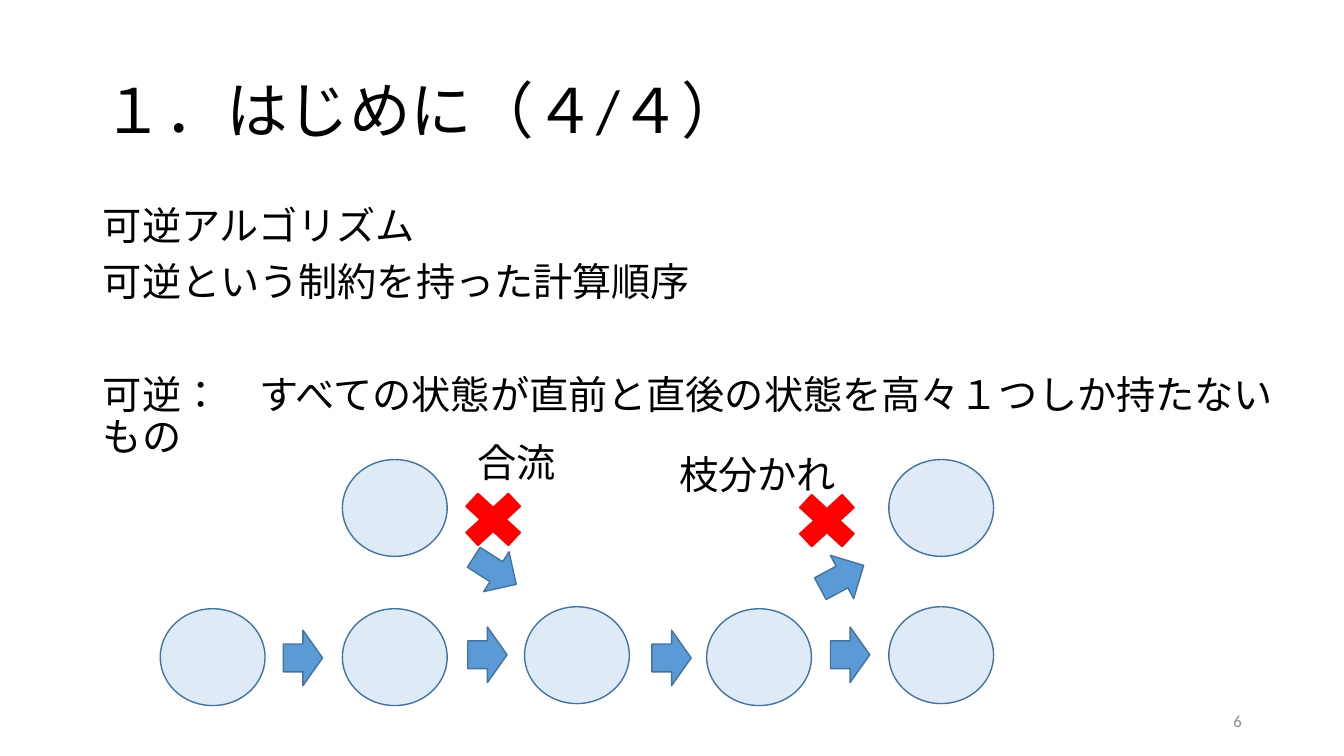
from lxml import etree
from pptx import Presentation
from pptx.dml.color import RGBColor
from pptx.enum.lang import MSO_LANGUAGE_ID
from pptx.enum.shapes import MSO_SHAPE
from pptx.enum.text import MSO_ANCHOR, MSO_AUTO_SIZE, PP_ALIGN
from pptx.oxml.ns import qn
from pptx.util import Cm, Pt

CIRCLE, ARROW, CROSS = MSO_SHAPE.OVAL, MSO_SHAPE.RIGHT_ARROW, MSO_SHAPE.MATH_MULTIPLY
LEFT, RIGHT = PP_ALIGN.LEFT, PP_ALIGN.RIGHT
MIDDLE, TOP = MSO_ANCHOR.MIDDLE, MSO_ANCHOR.TOP
NO_FIT = MSO_AUTO_SIZE.NONE
JAPANESE = MSO_LANGUAGE_ID.JAPANESE
PALE_BLUE, BLUE, DARK_BLUE, RED = "DEEBF7", "5B9BD5", "43739E", "FF0000"
BLACK, GREY = "000000", "8C8C8C"

presentation = Presentation()
presentation.slide_width, presentation.slide_height = Cm(33.87), Cm(19.05)
slide = presentation.slides.add_slide(presentation.slide_layouts[1])


def write(holder, box, lines, size, color=BLACK, align=LEFT, anchor=TOP):
    """Place a text holder and fill it with evenly formatted paragraphs."""
    holder.left, holder.top, holder.width, holder.height = map(Cm, box)
    frame = holder.text_frame
    frame.text = "\n".join(lines)
    frame.word_wrap = True
    frame.auto_size = NO_FIT
    frame.vertical_anchor = anchor
    for paragraph in frame.paragraphs:
        paragraph.alignment = align
        font = paragraph.runs[0].font
        font.name, font.size = "Calibri", Pt(size)
        font.language_id = JAPANESE
        font.color.rgb = RGBColor.from_string(color)


def draw(kind, box, fill, line=DARK_BLUE, rotation=0):
    shape = slide.shapes.add_shape(kind, *map(Cm, box))
    shape.shadow.inherit = False
    shape.rotation = rotation
    shape.fill.solid()
    shape.fill.fore_color.rgb = RGBColor.from_string(fill)
    shape.line.color.rgb = RGBColor.from_string(line)
    shape.line.width = Pt(1)


# Title and definition
title, definition = slide.placeholders
write(title, (2.34, 1.02, 29.21, 3.68), ["１．はじめに（４/４）"], 44, anchor=MIDDLE)
title.text_frame.paragraphs[0].line_spacing = 0.9

write(definition, (2.34, 5.08, 30.12, 6.58), [
    "可逆アルゴリズム",
    "可逆という制約を持った計算順序",
    "可逆：　すべての状態が直前と直後の状態を高々１つしか持たないもの",
], 28)
for paragraph, space_before in zip(definition.text_frame.paragraphs, (10, 10, 50)):
    paragraph.line_spacing = 0.9
    paragraph.space_before = Pt(space_before)
    properties = paragraph._p.get_or_add_pPr()
    properties.set("marL", "0")
    properties.set("indent", "0")
    etree.SubElement(properties, qn("a:buNone"))

# States: a chain of five, and two more above it
STATE_WIDTH, STATE_HEIGHT = 2.64, 2.44
FIRST_STATE, STATE_STEP = 4.04, 4.59
state_positions = [(0, 15.34), (1, 15.34), (2, 15.29), (3, 15.34), (4, 15.29),
                   (1, 11.58), (4, 11.58)]
for column, top in state_positions:
    left = FIRST_STATE + column * STATE_STEP
    draw(CIRCLE, (left, top, STATE_WIDTH, STATE_HEIGHT), PALE_BLUE)

# Allowed transitions
for left, top in [(7.14, 15.88), (11.79, 15.8), (16.43, 15.88), (20.93, 15.8)]:
    draw(ARROW, (left, top, 0.99, 1.4), BLUE)

# Forbidden transitions: merging and branching
forbidden = [
    ("合流", (11.79, 10.92, 2.84, 1.45), (11.84, 13.79, 1.27, 1.19), 32.5, (11.4, 12.14)),
    ("枝分かれ", (16.87, 11.23, 5.05, 1.45), (20.6, 13.92, 1.24, 1.24), 331.7, (19.81, 12.17)),
]
for label, label_box, arrow_box, angle, cross_corner in forbidden:
    write(slide.shapes.add_textbox(0, 0, 0, 0), label_box, [label], 28)
    draw(ARROW, arrow_box, BLUE, rotation=angle)
    draw(CROSS, (*cross_corner, 2.06, 1.9), RED, RED)

page_number = slide.shapes.add_textbox(0, 0, 0, 0)
write(page_number, (23.93, 17.65, 7.62, 1.02), ["6"], 12, GREY, RIGHT, MIDDLE)

presentation.save("out.pptx")
